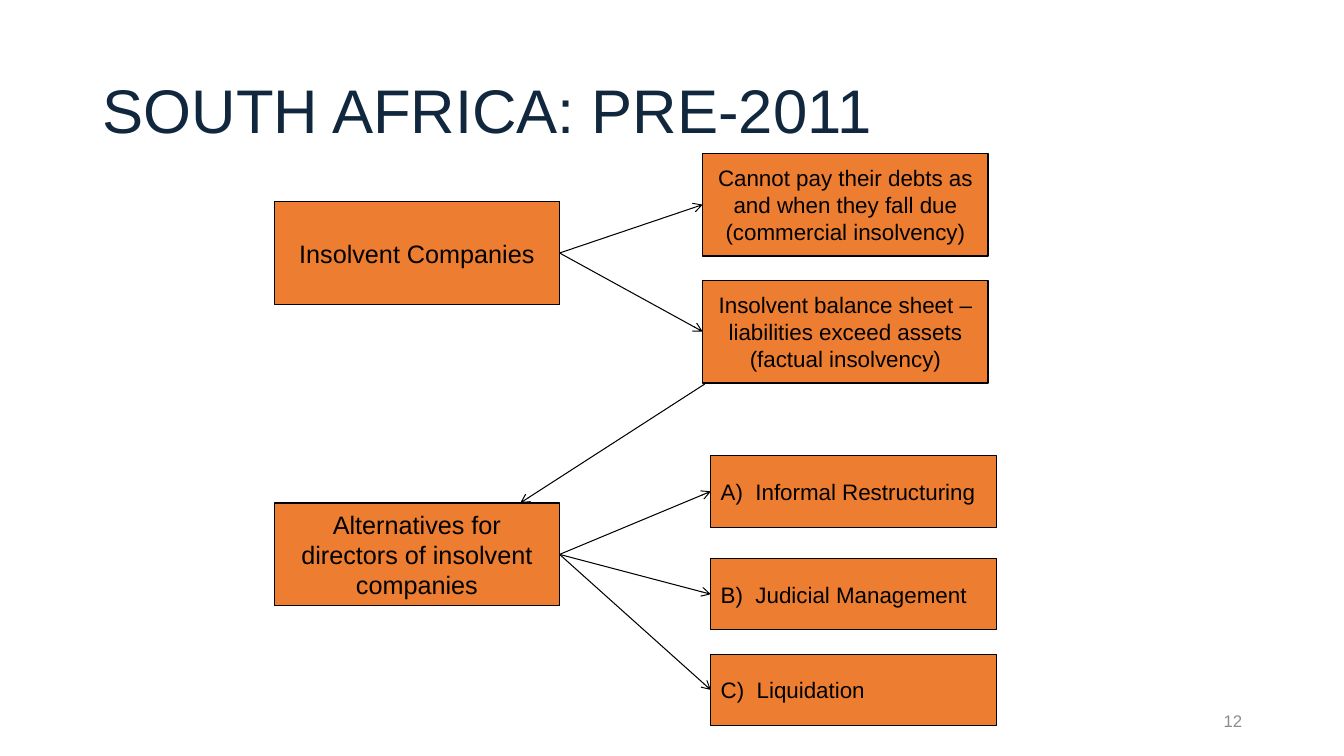
import pptx
import pptx.dml.color
import pptx.enum.shapes
import pptx.enum.text
import pptx.oxml
import pptx.oxml.ns
import pptx.util
from dataclasses import dataclass

EMU_PER_PX = 9144  # 100 px to the inch
RIGHT_SITE, LEFT_SITE = 3, 1
ALIGN = pptx.enum.text.PP_ALIGN
TITLE_LAYOUT = 5


@dataclass(frozen=True)
class Theme:
    font: str = "Arial"
    title: str = "11273D"
    box: str = "ED7D31"
    ink: str = "000000"
    muted: str = "8C8C8C"
    title_size: int = 44
    topic_size: int = 18
    detail_size: int = 16
    number_size: int = 12
    line_width: float = 0.75


THEME = Theme()
BOX_WIDTH, BOX_HEIGHT, OPTION_HEIGHT = 283, 102, 71
TOPIC_LEFT, TEST_LEFT, OPTION_LEFT = 272, 697, 705

TESTS = [
    (152, "Cannot pay their debts as and when they fall due (commercial insolvency)"),
    (278, "Insolvent balance sheet – liabilities exceed assets (factual insolvency)"),
]
OPTIONS = [
    (452, "A)  Informal Restructuring"),
    (554, "B)  Judicial Management"),
    (649, "C)  Liquidation"),
]


def px(*lengths):
    return [pptx.util.Emu(length * EMU_PER_PX) for length in lengths]


def rgb(value):
    return pptx.dml.color.RGBColor.from_string(value)


def set_attributes(target, values):
    for name, value in values.items():
        setattr(target, name, value)


def write_text(shape, text, size, color, alignment, wrap=True):
    frame = shape.text_frame
    set_attributes(frame, {
        "text": text,
        "word_wrap": wrap,
        "auto_size": pptx.enum.text.MSO_AUTO_SIZE.NONE,
        "vertical_anchor": pptx.enum.text.MSO_ANCHOR.MIDDLE,
    })
    paragraph = frame.paragraphs[0]
    paragraph.alignment = alignment
    set_attributes(paragraph.font, {"name": THEME.font, "size": pptx.util.Pt(size)})
    paragraph.font.color.rgb = rgb(color)
    return paragraph


def style_line(line):
    line.color.rgb = rgb(THEME.ink)
    line.width = pptx.util.Pt(THEME.line_width)


def add_title(slide, text):
    title = slide.shapes.title
    set_attributes(title, dict(zip(("left", "top", "width", "height"), px(92, 40, 1150, 145))))
    paragraph = write_text(title, text, THEME.title_size, THEME.title, ALIGN.LEFT)
    paragraph.line_spacing = 0.9


def add_box(slide, left, top, height, text, size, alignment=ALIGN.CENTER, wrap=True):
    box = slide.shapes.add_shape(
        pptx.enum.shapes.MSO_SHAPE.RECTANGLE, *px(left, top, BOX_WIDTH, height))
    box.shadow.inherit = False
    box.fill.solid()
    box.fill.fore_color.rgb = rgb(THEME.box)
    style_line(box.line)
    write_text(box, text, size, THEME.ink, alignment, wrap)
    return box


def add_arrow(slide, start=(0, 0), end=(0, 0)):
    arrow = slide.shapes.add_connector(
        pptx.enum.shapes.MSO_CONNECTOR.STRAIGHT, *px(*start, *end))
    style_line(arrow.line)
    head = pptx.oxml.parse_xml(
        f'<a:tailEnd {pptx.oxml.ns.nsdecls("a")} type="arrow"/>')
    arrow.line._get_or_add_ln().append(head)
    effects = pptx.oxml.parse_xml(f'<a:effectLst {pptx.oxml.ns.nsdecls("a")}/>')
    arrow._element.spPr.append(effects)
    return arrow


def link_boxes(slide, source, targets):
    """Fan arrows from the right side of source to the left side of each target."""
    for target in targets:
        arrow = add_arrow(slide)
        arrow.begin_connect(source, RIGHT_SITE)
        arrow.end_connect(target, LEFT_SITE)


def add_page_number(slide, text):
    box = slide.shapes.add_textbox(*px(942, 695, 300, 40))
    write_text(box, text, THEME.number_size, THEME.muted, ALIGN.RIGHT)


def main():
    presentation = pptx.Presentation()
    presentation.slide_width, presentation.slide_height = px(1333, 750)
    slide = presentation.slides.add_slide(presentation.slide_layouts[TITLE_LAYOUT])

    add_title(slide, "SOUTH AFRICA: PRE-2011")
    companies = add_box(slide, TOPIC_LEFT, 200, BOX_HEIGHT, "Insolvent Companies",
                        THEME.topic_size, wrap=False)
    tests = [add_box(slide, TEST_LEFT, top, BOX_HEIGHT, text, THEME.detail_size)
             for top, text in TESTS]
    alternatives = add_box(slide, TOPIC_LEFT, 499, BOX_HEIGHT,
                           "Alternatives for directors of insolvent companies",
                           THEME.topic_size)
    options = [add_box(slide, OPTION_LEFT, top, OPTION_HEIGHT, text,
                       THEME.detail_size, ALIGN.LEFT)
               for top, text in OPTIONS]

    link_boxes(slide, companies, tests)
    link_boxes(slide, alternatives, options)
    add_arrow(slide, (699, 381), (516, 499))
    add_page_number(slide, "12")

    presentation.save("out.pptx")


if __name__ == "__main__":
    main()
